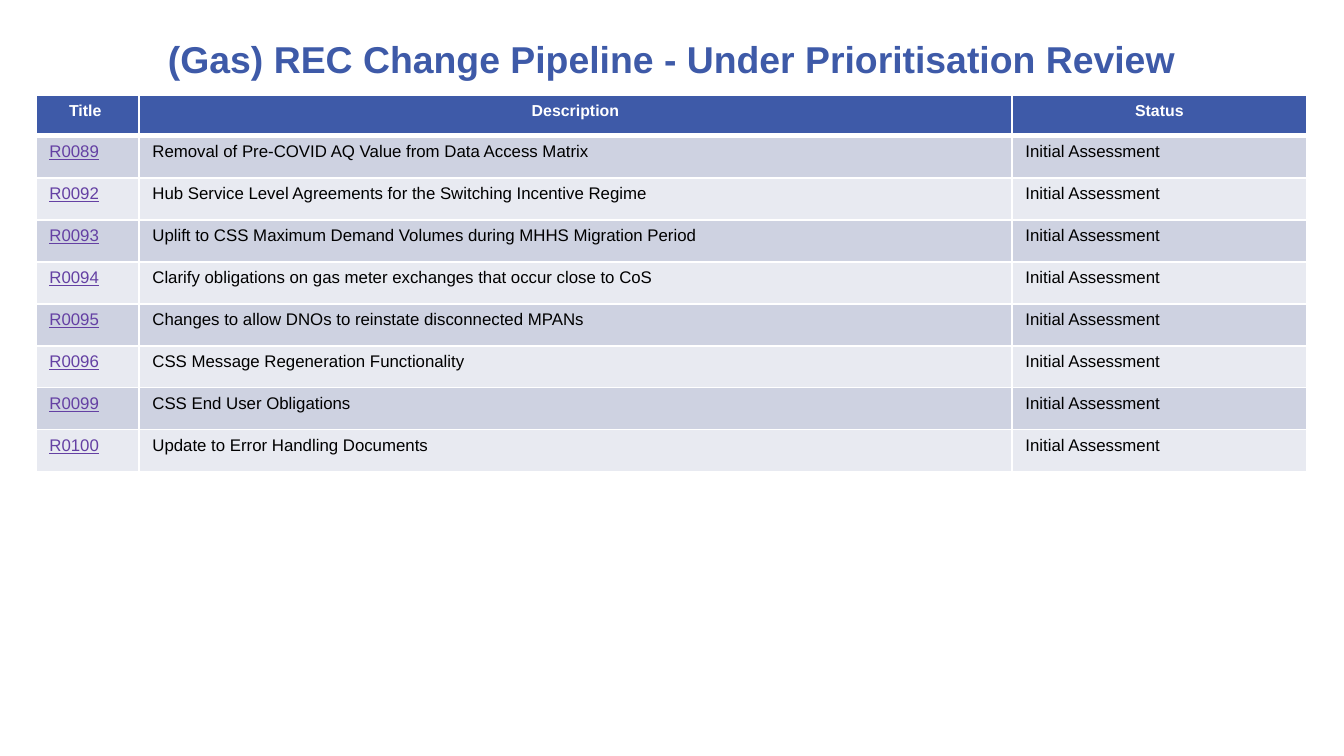
"""Build the gas REC change pipeline slide."""
from dataclasses import dataclass

from lxml import etree
from pptx import Presentation
from pptx import util as u
from pptx.dml.color import RGBColor
from pptx.enum import text
from pptx.oxml.ns import qn


@dataclass(frozen=True)
class Theme:
    font: str = "Arial"
    brand: str = "3E5AA8"
    white: str = "FFFFFF"
    black: str = "000000"
    link: str = "6440A3"
    bands: tuple = ("CED2E1", "E8EAF1")
    title_size: float = 20
    header_size: float = 8.5
    body_size: float = 9
    rule: float = 1
    header_rule: float = 3


THEME = Theme()
PX = 914400 / 134.4
COLUMN_WIDTHS = (103, 873, 295)
HEADER_HEIGHT, ROW_HEIGHT = 41, 42
HEADERS = ("Title ", "Description", "Status")
STATUS = "Initial Assessment"
CHANGES = (
    ("R0089", "Removal of Pre-COVID AQ Value from Data Access Matrix"),
    ("R0092", "Hub Service Level Agreements for the Switching Incentive Regime"),
    ("R0093", "Uplift to CSS Maximum Demand Volumes during MHHS Migration Period"),
    ("R0094", "Clarify obligations on gas meter exchanges that occur close to CoS"),
    ("R0095", "Changes to allow DNOs to reinstate disconnected MPANs"),
    ("R0096", "CSS Message Regeneration Functionality"),
    ("R0099", "CSS End User Obligations"),
    ("R0100", "Update to Error Handling Documents"),
)


def px(n):
    return u.Emu(round(n * PX))


def add_run(p, words, size, color, bold=False, underline=False):
    r = p.add_run()
    r.text = words
    r.font.name = THEME.font
    r.font.size = u.Pt(size)
    r.font.bold = bold
    r.font.underline = underline
    r.font.color.rgb = RGBColor.from_string(color)


def add_title(s, words):
    sp = s.shapes.title
    sp.left, sp.top, sp.width, sp.height = px(144), px(22), px(1056), px(74)
    tf = sp.text_frame
    tf.word_wrap = True
    tf.auto_size = text.MSO_AUTO_SIZE.NONE
    tf.vertical_anchor = text.MSO_ANCHOR.MIDDLE
    p = tf.paragraphs[0]
    p.alignment = text.PP_ALIGN.CENTER
    add_run(p, words, THEME.title_size, THEME.brand, bold=True)


def set_borders(cell, top, bottom):
    tc_pr = cell._tc.get_or_add_tcPr()
    widths = {"a:lnL": THEME.rule, "a:lnR": THEME.rule, "a:lnT": top, "a:lnB": bottom}
    for tag, width in widths.items():
        ln = etree.SubElement(tc_pr, qn(tag), w=str(u.Pt(width)))
        fill = etree.SubElement(ln, qn("a:solidFill"))
        etree.SubElement(fill, qn("a:srgbClr"), val=THEME.white)


def fill_cell(cell, words, row, col):
    header = row == 0
    set_borders(cell,
                top=THEME.header_rule if row == 1 else THEME.rule,
                bottom=THEME.header_rule if header else THEME.rule)
    cell.fill.solid()
    color = THEME.brand if header else THEME.bands[(row - 1) % 2]
    cell.fill.fore_color.rgb = RGBColor.from_string(color)
    p = cell.text_frame.paragraphs[0]
    if header:
        p.alignment = text.PP_ALIGN.CENTER
        add_run(p, words, THEME.header_size, THEME.white, bold=True)
    else:
        link = col == 0
        add_run(p, words, THEME.body_size, THEME.link if link else THEME.black,
                underline=link)


def add_change_table(s):
    rows = [HEADERS] + [(*change, STATUS) for change in CHANGES]
    height = HEADER_HEIGHT + ROW_HEIGHT * len(CHANGES)
    table = s.shapes.add_table(len(rows), len(HEADERS), px(36), px(95),
                               px(sum(COLUMN_WIDTHS)), px(height)).table
    for column, width in zip(table.columns, COLUMN_WIDTHS):
        column.width = px(width)
    for i, row in enumerate(rows):
        table.rows[i].height = px(ROW_HEIGHT if i else HEADER_HEIGHT)
        for j, words in enumerate(row):
            fill_cell(table.cell(i, j), words, i, j)


def main():
    prs = Presentation()
    prs.slide_width, prs.slide_height = px(1344), px(756)
    s = prs.slides.add_slide(prs.slide_layouts[5])
    add_title(s, "(Gas) REC Change Pipeline - Under Prioritisation Review")
    add_change_table(s)
    prs.save("out.pptx")


if __name__ == "__main__":
    main()
